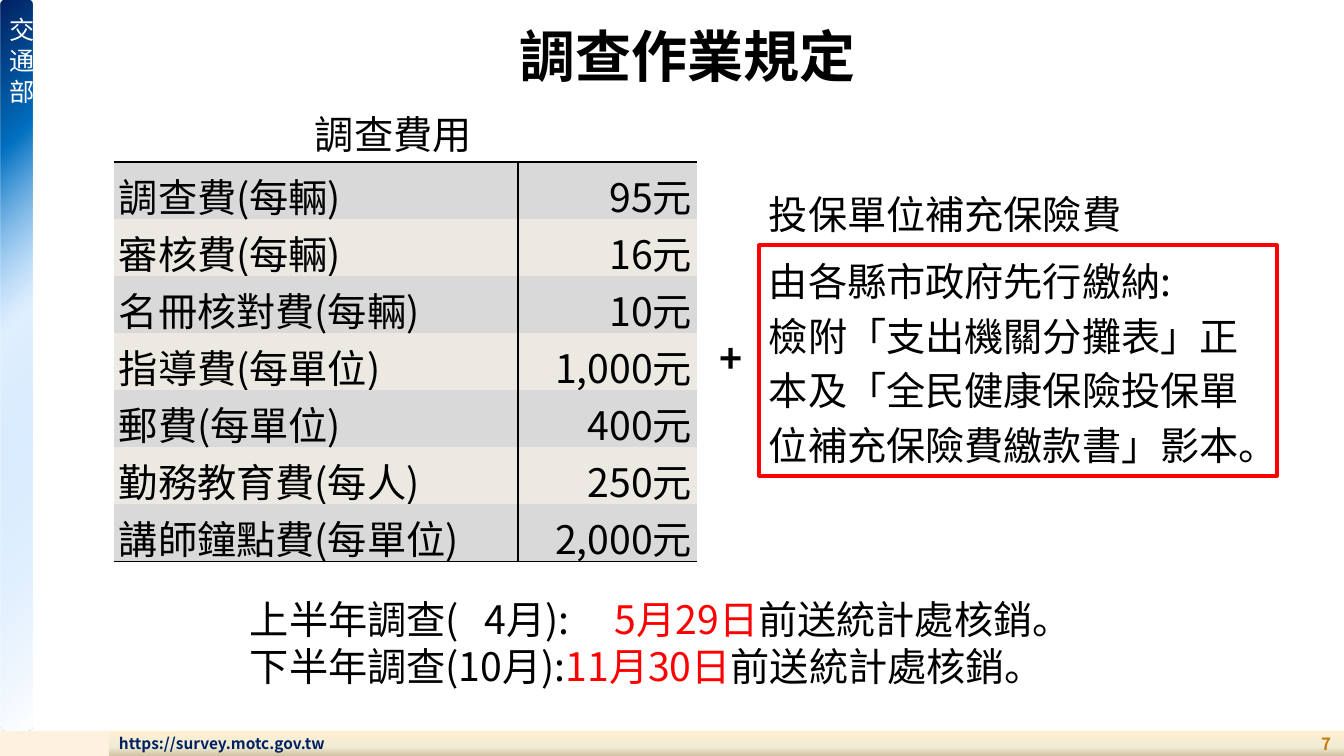
from lxml.etree import SubElement
from pptx import Presentation
from pptx.dml.color import RGBColor
from pptx.enum.shapes import MSO_SHAPE as SHAPE
from pptx.enum.text import MSO_ANCHOR as ANCHOR, PP_ALIGN as ALIGN
from pptx.oxml import parse_xml
from pptx.oxml.ns import nsdecls, qn
from pptx.util import Emu, Pt

SCALE = 914400 / 100.8
BLACK = RGBColor(0x00, 0x00, 0x00)
WHITE = RGBColor(0xFF, 0xFF, 0xFF)
RED = RGBColor(0xFF, 0x00, 0x00)
NAVY = RGBColor(0x00, 0x20, 0x60)
AMBER = RGBColor(0xC8, 0x7D, 0x0E)
CREAM = RGBColor(0xFD, 0xF1, 0xE0)
PEACH = RGBColor(0xFA, 0xDE, 0xB6)
GRAY = RGBColor(0xD9, 0xD9, 0xD9)
TAUPE = RGBColor(0xA1, 0x95, 0x74)
SC = "Noto Sans CJK SC"
TC = "Noto Sans CJK TC"


def px(*lengths):
    return [Emu(round(length * SCALE)) for length in lengths]


def add_run(paragraph, text, size=28, color=BLACK, bold=False, font=SC):
    """Append a run with the same Latin and East Asian font."""
    run = paragraph.add_run()
    run.text = text
    run.font.size = Pt(size)
    run.font.bold = bold
    run.font.color.rgb = color
    run.font.name = font
    SubElement(run.font._element, qn("a:ea")).set("typeface", font)


prs = Presentation()
prs.slide_width, prs.slide_height = px(1344, 756)
slide = prs.slides.add_slide(prs.slide_layouts[6])
shapes = slide.shapes

# Bands along the bottom and the left edge
bands = []
for kind, place, color in [
    (SHAPE.RECTANGLE, (0, 731, 165, 25), CREAM),
    (SHAPE.RECTANGLE, (177, 731, 1167, 25), PEACH),
    (SHAPE.ROUNDED_RECTANGLE, (-349, 349, 731, 32), None),
    (SHAPE.RECTANGLE, (109, 731, 1235, 25), None),
]:
    band = shapes.add_shape(kind, *px(*place))
    band.shadow.inherit = False
    band.line.fill.background()
    if color is None:
        band.fill.background()
    else:
        band.fill.solid()
        band.fill.fore_color.rgb = color
    bands.append(band)
sidebar, footer = bands[2:]
sidebar.rotation = 90

for band, stops, direction in [
    (sidebar,
     [(0, "FFFFFF", 100), (56, "99CCFF", 30), (80, "0070C0", 100), (100, "002060", 100)],
     '<a:path path="circle"><a:fillToRect l="100000" t="100000"/></a:path>'),
    (footer,
     [(0, "FFEFD1", 100), (65, "F0EBD5", 100), (100, "D1C39F", 100)],
     '<a:lin ang="5400000" scaled="0"/>'),
]:
    stop_list = "".join(
        f'<a:gs pos="{pos}000"><a:srgbClr val="{color}"><a:alpha val="{alpha}000"/></a:srgbClr></a:gs>'
        for pos, color, alpha in stops)
    gradient = parse_xml(f'<a:gradFill rotWithShape="1" {nsdecls("a")}>'
                         f"<a:gsLst>{stop_list}</a:gsLst>{direction}</a:gradFill>")
    properties = band._element.spPr
    properties.replace(properties.find(qn("a:noFill")), gradient)

footer.text_frame.vertical_anchor = ANCHOR.MIDDLE
address = footer.text_frame.paragraphs[0]
address.alignment = ALIGN.LEFT
add_run(address, "https://survey.motc.gov.tw", 11, NAVY, True, TC)

# One-line texts
captions = {}
for text, place, align, style in [
    ("交 通 部", (-9, 7, 50, 135), ALIGN.LEFT, (18, WHITE)),
    ("調查作業規定", (35, 17, 1305, 109), ALIGN.CENTER, (40, BLACK, True)),
    ("7", (1296, 731, 45, 25), ALIGN.RIGHT, (12, AMBER, True, TC)),
    ("+", (698, 329, 67, 57), ALIGN.CENTER, (28, BLACK, True)),
    ("調查費用", (305, 105, 194, 57), ALIGN.LEFT, ()),
    ("投保單位補充保險費", (759, 185, 399, 57), ALIGN.LEFT, ()),
]:
    caption = shapes.add_textbox(*px(*place)).text_frame
    caption.word_wrap = True
    caption.paragraphs[0].alignment = align
    add_run(caption.paragraphs[0], text, *style)
    captions[text] = caption
captions["交 通 部"]._txBody.bodyPr.set("vert", "eaVert")
captions["7"].vertical_anchor = ANCHOR.MIDDLE

# Insurance premium box
premium = shapes.add_shape(SHAPE.RECTANGLE, *px(759, 245, 518, 231))
premium.shadow.inherit = False
premium.fill.background()
premium.line.color.rgb = RED
premium.line.width = Pt(2.25)
premium_text = premium.text_frame
premium_text.word_wrap = True
premium_text.vertical_anchor = ANCHOR.TOP
for i, text in enumerate([
    "由各縣市政府先行繳納:",
    "檢附「支出機關分攤表」正本及「全民健康保險投保單位補充保險費繳款書」影本。",
]):
    paragraph = premium_text.add_paragraph() if i else premium_text.paragraphs[0]
    paragraph.alignment = ALIGN.LEFT
    paragraph.line_spacing = Pt(39)
    add_run(paragraph, text)

# Deadlines, with tab stops for the one-digit month and date
deadlines = shapes.add_textbox(*px(240, 590, 839, 105)).text_frame
deadlines.word_wrap = True
for i, (survey, date) in enumerate([
    ("上半年調查(\t4月):\t", "5月29日"),
    ("下半年調查(10月):", "11月30日"),
]):
    paragraph = deadlines.add_paragraph() if i else deadlines.paragraphs[0]
    if "\t" in survey:
        tabs = SubElement(paragraph._p.get_or_add_pPr(), qn("a:tabLst"))
        for stop in px(235, 365):
            SubElement(tabs, qn("a:tab"), pos=str(stop), algn="l")
    add_run(paragraph, survey)
    add_run(paragraph, date, color=RED)
    add_run(paragraph, "前送統計處核銷。")

# Fee table
fees = [
    ("調查費(每輛)", "95元"),
    ("審核費(每輛)", "16元"),
    ("名冊核對費(每輛)", "10元"),
    ("指導費(每單位)", "1,000元"),
    ("郵費(每單位)", "400元"),
    ("勤務教育費(每人)", "250元"),
    ("講師鐘點費(每單位)", "2,000元"),
]
fee_table = shapes.add_table(len(fees), 2, *px(114, 162, 583, 399)).table
fee_table.first_row = fee_table.horz_banding = False
NO_STYLE = "{2D5ABB26-0587-4C30-8999-92F81FD0307C}"
fee_table._tbl.tblPr.find(qn("a:tableStyleId")).text = NO_STYLE
for column, width in zip(fee_table.columns, px(404, 179)):
    column.width = width
for r, fee in enumerate(fees):
    fee_table.rows[r].height = px(57)[0]
    for c, text in enumerate(fee):
        cell = fee_table.cell(r, c)
        cell.margin_left, cell.margin_right, cell.margin_top, cell.margin_bottom = px(5, 5, 5, 5)
        cell.fill.solid()
        cell.fill.fore_color.rgb = TAUPE if r % 2 else GRAY
        properties = cell._tc.get_or_add_tcPr()
        if r % 2:
            tint = properties.find(".//" + qn("a:srgbClr"))
            SubElement(tint, qn("a:alpha")).set("val", "20000")
        sides = ["lnL" if c else "lnR"]
        if r == 0:
            sides.append("lnT")
        if r == len(fees) - 1:
            sides.append("lnB")
        for i, side in enumerate(sides):
            properties.insert(i, parse_xml(
                f'<a:{side} w="12700" {nsdecls("a")}><a:solidFill>'
                f'<a:srgbClr val="{BLACK}"/></a:solidFill></a:{side}>'))
        paragraph = cell.text_frame.paragraphs[0]
        paragraph.alignment = ALIGN.RIGHT if c else ALIGN.LEFT
        add_run(paragraph, text)

prs.save("out.pptx")
